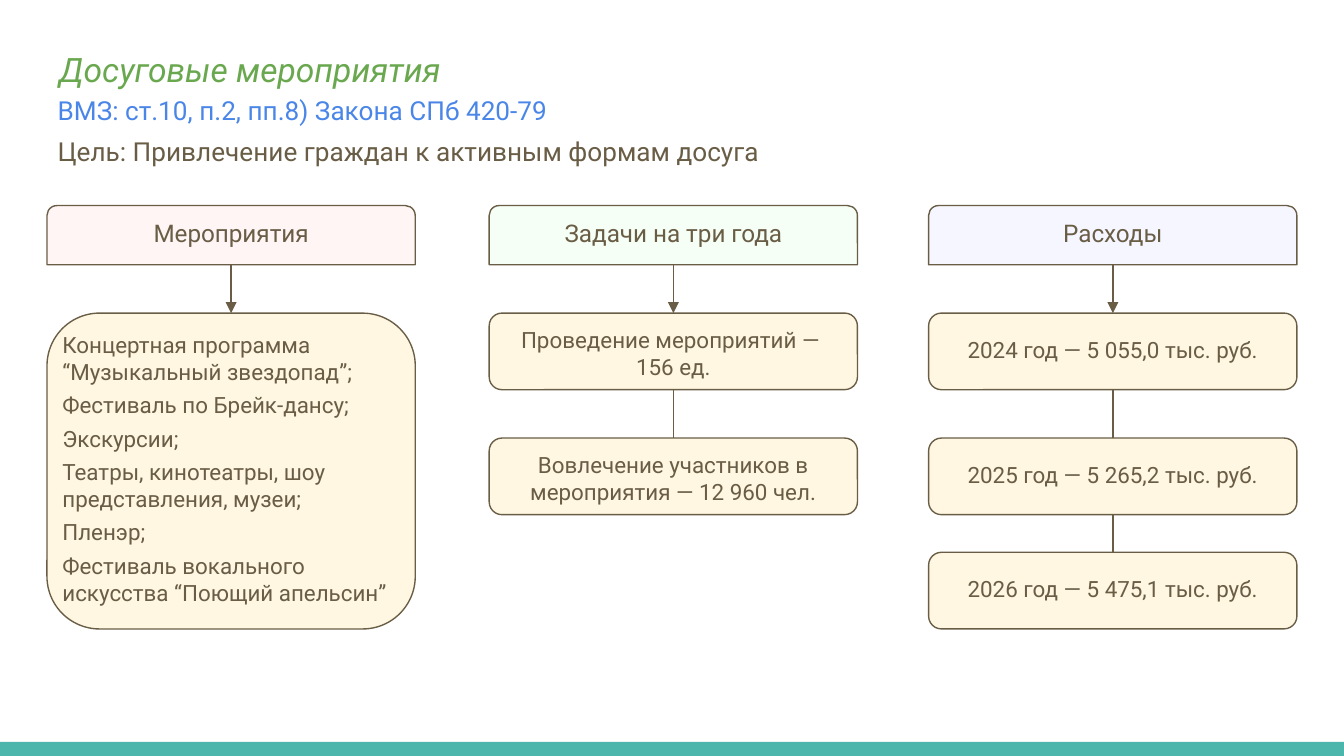
"""Builds a slide on leisure events: activities, three-year tasks and costs."""
from lxml import etree
from pptx import Presentation
from pptx.dml.color import RGBColor
from pptx.enum import shapes as kinds, text as txt
from pptx.oxml import ns
from pptx.util import Inches, Pt

HUES = {
    "ink": "695D46", "title": "6AA84F", "law": "4A86E8", "bar": "4DB6AC",
    "card": "FFF7E1", "rose": "FFF5F5", "mint": "F6FFF5", "lilac": "F5F6FF",
}
FONT = "Roboto"
WIDE = 2.74
HEAD_TOP, HEAD_HIGH = 1.53, 0.44
ROWS = [2.33, 3.26, 4.11]
CARD_HIGH, LIST_HIGH = 0.57, 2.35
EVENTS = [
    "Концертная программа “Музыкальный звездопад”;",
    "Фестиваль по Брейк-дансу;",
    "Экскурсии;",
    "Театры, кинотеатры, шоу представления, музеи;",
    "Пленэр;",
    "Фестиваль вокального искусства “Поющий апельсин”",
]
TASKS = [
    ["Проведение мероприятий — ", "156 ед."],
    ["Вовлечение участников в мероприятия — 12 960 чел."],
]
COSTS = [
    ["2024 год — 5 055,0 тыс. руб."],
    ["2025 год — 5 265,2 тыс. руб."],
    ["2026 год — 5 475,1 тыс. руб."],
]


def color(name):
    return RGBColor.from_string(HUES[name])


def write(shape, lines, size, hue="ink", align=txt.PP_ALIGN.LEFT, gap=0,
          pad=0.1, top=0.1, low=0.1, anchor=txt.MSO_ANCHOR.TOP):
    frame = shape.text_frame
    frame.word_wrap = True
    frame.auto_size = txt.MSO_AUTO_SIZE.NONE
    frame.vertical_anchor = anchor
    frame.margin_left = frame.margin_right = Inches(pad)
    frame.margin_top, frame.margin_bottom = Inches(top), Inches(low)
    frame.text = "\n".join(lines)
    for para in frame.paragraphs:
        para.alignment = align
        para.space_before, para.space_after = Pt(0), Pt(gap)
        for run in para.runs:
            run.font.name, run.font.size = FONT, Pt(size)
            run.font.color.rgb = color(hue)


def add_title(slide, line):
    title = slide.shapes.title
    title.left, title.top = Inches(0.34), Inches(0.22)
    title.width, title.height = Inches(9.32), Inches(0.51)
    write(title, [line], 18, "title")
    para = title.text_frame.paragraphs[0]
    para.line_spacing = 1.15
    para.runs[0].font.italic = True


def add_label(slide, top, line, hue):
    box = slide.shapes.add_textbox(
        Inches(0.33), Inches(top), Inches(9.35), Inches(0.44))
    write(box, [line], 14, hue)


def add_box(slide, kind, left, top, high, fill):
    box = slide.shapes.add_shape(
        kind, Inches(left), Inches(top), Inches(WIDE), Inches(high))
    box.shadow.inherit = False
    box.fill.solid()
    box.fill.fore_color.rgb = color(fill)
    box.line.color.rgb = color("ink")
    box.line.width = Pt(0.75)
    return box


def add_head(slide, left, line, fill):
    kind = kinds.MSO_SHAPE.ROUND_2_SAME_RECTANGLE
    head = add_box(slide, kind, left, HEAD_TOP, HEAD_HIGH, fill)
    write(head, [line], 13, align=txt.PP_ALIGN.CENTER, top=0, low=0.05,
          anchor=txt.MSO_ANCHOR.MIDDLE)
    return head


def add_card(slide, left, top, lines, drop, lift):
    kind = kinds.MSO_SHAPE.ROUNDED_RECTANGLE
    card = add_box(slide, kind, left, top, CARD_HIGH, "card")
    write(card, lines, 12, align=txt.PP_ALIGN.CENTER, top=drop, low=lift,
          pad=0.07, anchor=txt.MSO_ANCHOR.MIDDLE)
    return card


def add_list(slide, left, lines):
    kind = kinds.MSO_SHAPE.ROUNDED_RECTANGLE
    box = add_box(slide, kind, left, ROWS[0], LIST_HIGH, "card")
    write(box, lines, 12, gap=3.5, pad=0, top=0, low=0.04,
          anchor=txt.MSO_ANCHOR.MIDDLE)
    return box


def add_link(slide, upper, lower):
    mid = upper.left + upper.width // 2
    link = slide.shapes.add_connector(
        kinds.MSO_CONNECTOR.STRAIGHT, mid, upper.top + upper.height,
        mid, lower.top)
    link.end_connect(lower, 0)
    link.line.color.rgb = color("ink")
    link.line.width = Pt(0.75)
    etree.SubElement(link._element.spPr, ns.qn("a:effectLst"))
    if upper.auto_shape_type == kinds.MSO_SHAPE.ROUNDED_RECTANGLE:
        link.begin_connect(upper, 2)
    else:
        tail = etree.SubElement(link.line._get_or_add_ln(), ns.qn("a:tailEnd"))
        tail.set("type", "triangle")


def add_chain(slide, head, left, items, drop=0, lift=0):
    upper = head
    for top, lines in zip(ROWS, items):
        card = add_card(slide, left, top, lines, drop, lift)
        add_link(slide, upper, card)
        upper = card


def add_bar(slide):
    bar = slide.shapes.add_shape(
        kinds.MSO_SHAPE.RECTANGLE, Inches(0), Inches(5.52),
        Inches(10), Inches(0.11))
    bar.shadow.inherit = False
    bar.fill.solid()
    bar.fill.fore_color.rgb = color("bar")
    bar.line.fill.background()


def main():
    deck = Presentation()
    deck.slide_width = Inches(10)
    deck.slide_height = deck.slide_width * 9 // 16
    slide = deck.slides.add_slide(deck.slide_layouts[5])
    add_bar(slide)
    add_title(slide, "Досуговые мероприятия")
    add_label(slide, 0.6, "ВМЗ: ст.10, п.2, пп.8) Закона СПб 420-79", "law")
    add_label(slide, 0.91,
              "Цель: Привлечение граждан к активным формам досуга", "ink")

    head = add_head(slide, 0.35, "Мероприятия", "rose")
    add_link(slide, head, add_list(slide, 0.35, EVENTS))
    head = add_head(slide, 3.64, "Задачи на три года", "mint")
    add_chain(slide, head, 3.64, TASKS, drop=0.02)
    head = add_head(slide, 6.91, "Расходы", "lilac")
    add_chain(slide, head, 6.91, COSTS, lift=0.03)
    deck.save("out.pptx")


if __name__ == "__main__":
    main()
